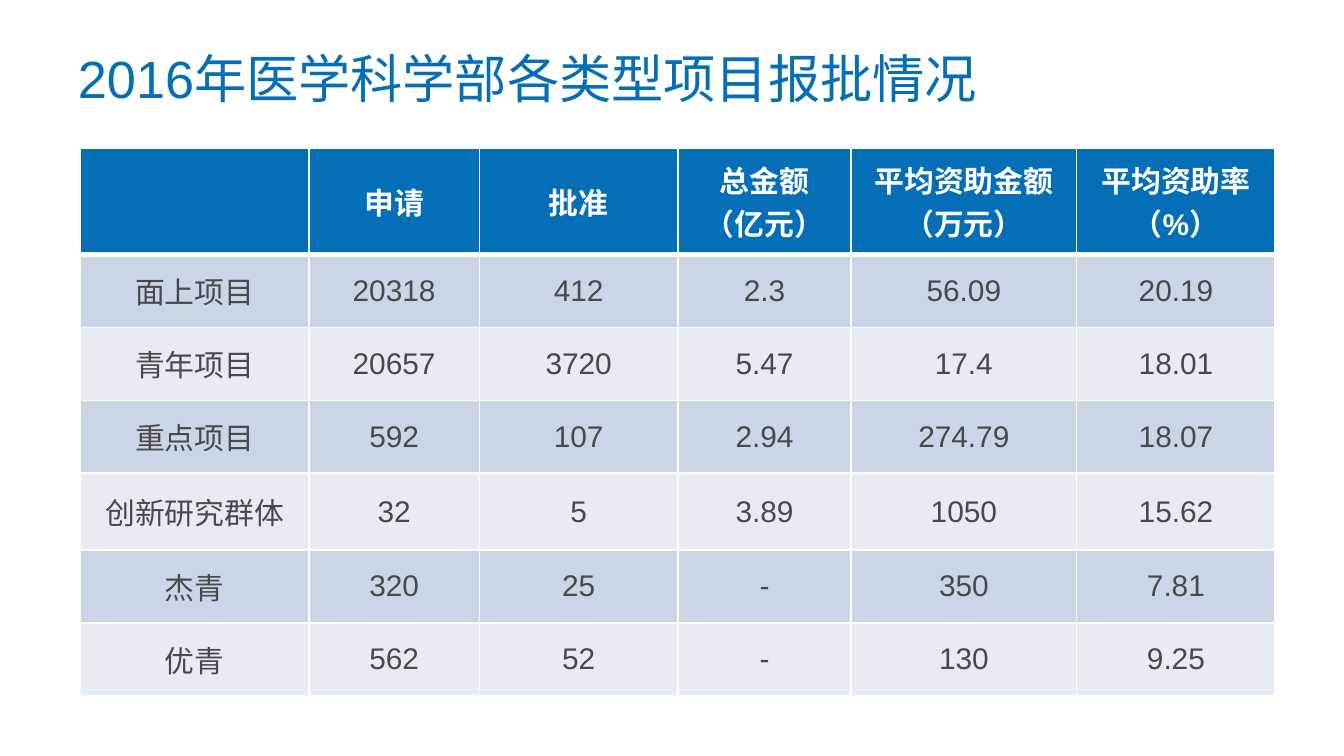
import pptx
import pptx.dml.color
import pptx.enum.text
import pptx.oxml.ns
import pptx.util
from lxml import etree

RGBColor = pptx.dml.color.RGBColor
Inches = pptx.util.Inches
Pt = pptx.util.Pt
MIDDLE = pptx.enum.text.MSO_ANCHOR.MIDDLE
CENTER = pptx.enum.text.PP_ALIGN.CENTER
qn = pptx.oxml.ns.qn

BLUE = RGBColor(0x04, 0x6F, 0xB6)
WHITE = RGBColor(0xFF, 0xFF, 0xFF)
DARK_GREY = RGBColor(0x47, 0x49, 0x4B)
BANDS = (RGBColor(0xCC, 0xD5, 0xE5), RGBColor(0xE7, 0xEB, 0xF3))

FONT = "Arial"
SLIDE_WIDTH = 10
SLIDE_HEIGHT = SLIDE_WIDTH * 9 / 16
TITLE_BOX = (0.51, 0.28, 8.98, 0.65)
TABLE_BOX = (0.6, 1.1, 8.89, 4.08)
COLUMN_SHARES = (1.7, 1.27, 1.48, 1.29, 1.68, 1.48)
ROW_SHARES = (0.79, 0.54, 0.54, 0.54, 0.57, 0.54, 0.54)

TITLE = "2016年医学科学部各类型项目报批情况"
# A line break inside a heading starts a new paragraph.
FUNDING = (
    ("", "申请", "批准", "总金额\n（亿元）", "平均资助金额\n（万元）", "平均资助率（%）"),
    ("面上项目", "20318", "412", "2.3", "56.09", "20.19"),
    ("青年项目", "20657", "3720", "5.47", "17.4", "18.01"),
    ("重点项目", "592", "107", "2.94", "274.79", "18.07"),
    ("创新研究群体", "32", "5", "3.89", "1050", "15.62"),
    ("杰青", "320", "25", "-", "350", "7.81"),
    ("优青", "562", "52", "-", "130", "9.25"),
)


def add_run(paragraph, text, size, color, bold=False):
    run = paragraph.add_run()
    run.text = text
    run.font.name = FONT
    run.font.size = Pt(size)
    run.font.bold = bold
    run.font.color.rgb = color


def add_title(slide, box):
    frame = slide.shapes.add_textbox(*map(Inches, box)).text_frame
    frame.word_wrap = True
    frame.vertical_anchor = MIDDLE
    frame.margin_left = frame.margin_right = Inches(0.07)
    frame.margin_top = frame.margin_bottom = Inches(0.04)
    frame.paragraphs[0].line_spacing = 0.9
    add_run(frame.paragraphs[0], TITLE, 28, BLUE)


def set_borders(cell, widths):
    """Draw white cell edges; widths maps L, R, T and B to points, in that order."""
    properties = cell._tc.get_or_add_tcPr()
    for side, width in widths.items():
        edge = etree.SubElement(properties, qn(f"a:ln{side}"), w=str(Pt(width)))
        fill = etree.SubElement(edge, qn("a:solidFill"))
        etree.SubElement(fill, qn("a:srgbClr"), val=str(WHITE))


def fill_cell(cell, text, row):
    is_header = row == 0
    set_borders(cell, {"L": 1, "R": 1, "T": 3 if row == 1 else 1, "B": 3 if is_header else 1})
    cell.fill.solid()
    cell.fill.fore_color.rgb = BLUE if is_header else BANDS[(row - 1) % 2]
    cell.vertical_anchor = MIDDLE
    if not text:
        return
    frame = cell.text_frame
    for index, line in enumerate(text.split("\n")):
        paragraph = frame.add_paragraph() if index else frame.paragraphs[0]
        paragraph.alignment = CENTER
        add_run(paragraph, line, 16, WHITE if is_header else DARK_GREY, is_header)


def add_funding_table(slide, box):
    width, height = box[2:]
    table = slide.shapes.add_table(len(FUNDING), len(FUNDING[0]), *map(Inches, box)).table
    for column, share in zip(table.columns, COLUMN_SHARES):
        column.width = Inches(width * share / sum(COLUMN_SHARES))
    for row, share in zip(table.rows, ROW_SHARES):
        row.height = Inches(height * share / sum(ROW_SHARES))
    for row, values in enumerate(FUNDING):
        for column, text in enumerate(values):
            fill_cell(table.cell(row, column), text, row)


def main():
    presentation = pptx.Presentation()
    presentation.slide_width = Inches(SLIDE_WIDTH)
    presentation.slide_height = Inches(SLIDE_HEIGHT)
    slide = presentation.slides.add_slide(presentation.slide_layouts[6])
    add_title(slide, TITLE_BOX)
    add_funding_table(slide, TABLE_BOX)
    presentation.save("out.pptx")


if __name__ == "__main__":
    main()
